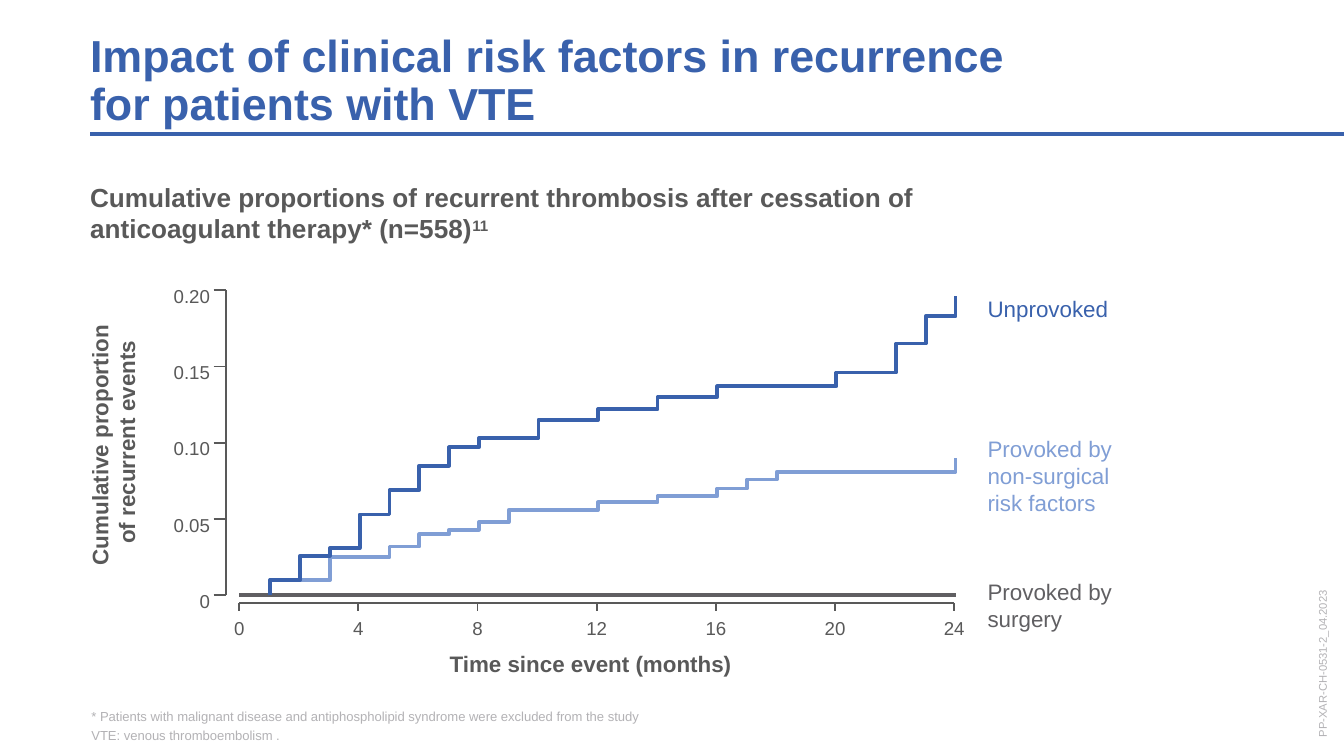
from copy import deepcopy
from dataclasses import dataclass

from lxml.etree import SubElement
from pptx import Presentation
from pptx.dml.color import RGBColor
from pptx.enum.shapes import MSO_CONNECTOR as Connector
from pptx.enum.text import MSO_ANCHOR as Anchor, MSO_AUTO_SIZE as AutoSize, PP_ALIGN as Align
from pptx.oxml.ns import qn
from pptx.util import Inches, Pt


@dataclass(frozen=True)
class Theme:
    font: str = "Arial"
    blue: str = "3961AC"
    light_blue: str = "809ED5"
    gray: str = "595959"
    curve_gray: str = "605F62"
    pale_gray: str = "B3B2B5"
    title: float = 24
    subtitle: float = 14
    label: float = 12
    tick: float = 10
    footnote: float = 7
    code: float = 6
    rule: float = 2.25
    curve: float = 2
    axis: float = 1


# Plot area: inches for the axes, months across and proportion up
PLOT_LEFT, PLOT_RIGHT, PLOT_TOP, PLOT_BOTTOM = 1.78, 7.1, 2.16, 4.43
LAST_MONTH, TOP_PROPORTION = 24, 0.20
Y_AXIS, X_AXIS = 1.68, 4.49
CURVE_SHIFT = 0.01
MONTH_STEP, PROPORTION_TICKS = 4, ["0", "0.05", "0.10", "0.15", "0.20"]

UNPROVOKED = [
    (1, 0.010), (2, 0.026), (3, 0.031), (4, 0.053), (5, 0.069), (6, 0.085),
    (7, 0.097), (8, 0.103), (10, 0.115), (12, 0.122), (14, 0.130),
    (16, 0.137), (20, 0.146), (22, 0.165), (23, 0.183), (24, 0.196),
]
NON_SURGICAL = [
    (1, 0.010), (3, 0.025), (5, 0.032), (6, 0.040), (7, 0.043), (8, 0.048),
    (9, 0.056), (12, 0.061), (14, 0.065), (16, 0.070), (17, 0.076),
    (18, 0.081), (24, 0.090),
]


def month_x(month):
    return PLOT_LEFT + (PLOT_RIGHT - PLOT_LEFT) * month / LAST_MONTH


def proportion_y(value):
    return PLOT_BOTTOM - (PLOT_BOTTOM - PLOT_TOP) * value / TOP_PROPORTION


class SlideBuilder:
    def __init__(self, slide, theme):
        self.slide = slide
        self.theme = theme

    def style_span(self, span, size, color, bold):
        values = {"name": self.theme.font, "size": Pt(size), "bold": bold}
        for name, value in values.items():
            setattr(span.font, name, value)
        span.font.color.rgb = RGBColor.from_string(color)

    def fill_text(self, box, lines, size, color, bold=False, inset=True,
                  anchor=Anchor.TOP, grow=True, **paragraph_format):
        """Write each item of lines as a paragraph; a newline is a line break."""
        frame = box.text_frame
        frame_format = {
            "word_wrap": True, "vertical_anchor": anchor,
            "auto_size": AutoSize.SHAPE_TO_FIT_TEXT if grow else AutoSize.NONE,
        }
        if not inset:
            for side in ("left", "right", "top", "bottom"):
                frame_format[f"margin_{side}"] = 0
        for name, value in frame_format.items():
            setattr(frame, name, value)
        for index, line in enumerate(lines):
            para = frame.add_paragraph() if index else frame.paragraphs[0]
            para.text = line
            for name, value in paragraph_format.items():
                setattr(para, name, value)
            for span in para.runs:
                self.style_span(span, size, color, bold)
            # Line breaks need the run size too, or they stretch the line
            for line_break in para._p.findall(qn("a:br")):
                line_break.append(deepcopy(para.runs[0]._r.rPr))

    def text(self, left, top, width, height, lines, size, color,
             rotation=0, **text_format):
        box = self.slide.shapes.add_textbox(
            Inches(left), Inches(top), Inches(width), Inches(height))
        box.rotation = rotation
        self.fill_text(box, lines, size, color, **text_format)
        return box

    def title(self, left, top, width, height, text):
        box = self.slide.shapes.title
        place = {"left": left, "top": top, "width": width, "height": height}
        for name, value in place.items():
            setattr(box, name, Inches(value))
        self.fill_text(box, [text], self.theme.title, self.theme.blue, bold=True,
                       inset=False, anchor=Anchor.BOTTOM,
                       alignment=Align.LEFT, line_spacing=0.9)

    def superscript(self, box, text, size, color):
        span = box.text_frame.paragraphs[-1].add_run()
        span.text = text
        self.style_span(span, size, color, True)
        span._r.get_or_add_rPr().set("baseline", "30000")

    def line(self, x1, y1, x2, y2, color, weight):
        line = self.slide.shapes.add_connector(
            Connector.STRAIGHT, Inches(x1), Inches(y1), Inches(x2), Inches(y2))
        line.line.color.rgb = RGBColor.from_string(color)
        line.line.width = Pt(weight)
        SubElement(line._element.spPr, qn("a:effectLst"))

    def step_curve(self, steps, color):
        """Draw a curve that jumps to each new proportion at its month."""
        corners, level = [], 0
        for month, value in steps:
            x = Inches(month_x(month) + CURVE_SHIFT)
            corners += [(x, Inches(proportion_y(level))),
                        (x, Inches(proportion_y(value)))]
            level = value
        builder = self.slide.shapes.build_freeform(*corners[0])
        builder.add_line_segments(corners[1:], close=False)
        curve = builder.convert_to_shape()
        curve.shadow.inherit = False
        curve.fill.background()
        curve.line.color.rgb = RGBColor.from_string(color)
        curve.line.width = Pt(self.theme.curve)

    def axes(self):
        theme = self.theme
        stroke = (theme.gray, theme.axis)
        self.line(PLOT_LEFT, X_AXIS, PLOT_RIGHT, X_AXIS, *stroke)
        self.line(Y_AXIS, PLOT_TOP, Y_AXIS, PLOT_BOTTOM, *stroke)
        for label in PROPORTION_TICKS:
            y = proportion_y(float(label))
            self.line(Y_AXIS - 0.09, y, Y_AXIS, y, *stroke)
            self.text(0.81, y - 0.09, 0.85, 0.27, [label], theme.tick, theme.gray,
                      alignment=Align.RIGHT)
        for month in range(0, LAST_MONTH + 1, MONTH_STEP):
            x = month_x(month)
            self.line(x, X_AXIS, x, X_AXIS + 0.06, *stroke)
            self.text(x - 0.37, 4.54, 0.74, 0.27, [str(month)], theme.tick,
                      theme.gray, alignment=Align.CENTER)


def main():
    theme = Theme()
    deck = Presentation()
    deck.slide_width = Inches(10)
    deck.slide_height = deck.slide_width * 9 // 16
    page = SlideBuilder(deck.slides.add_slide(deck.slide_layouts[5]), theme)

    page.title(0.67, 0.24, 9.06, 0.73,
               "Impact of clinical risk factors in recurrence \nfor patients with VTE")
    page.line(0.67, 1, 10, 1, theme.blue, theme.rule)
    subtitle = page.text(
        0.67, 1.35, 9.05, 0.47,
        ["Cumulative proportions of recurrent thrombosis after cessation of \n"
         "anticoagulant therapy* (n=558)"],
        theme.subtitle, theme.gray, bold=True, inset=False)
    page.superscript(subtitle, "11", theme.subtitle, theme.gray)

    page.axes()
    axis_title = {"size": theme.label, "color": theme.gray, "bold": True,
                  "alignment": Align.CENTER}
    page.text(-0.3, 3.04, 2.28, 0.5, ["Cumulative proportion \nof recurrent events"],
              rotation=270, **axis_title)
    page.text(1.68, 4.79, 5.43, 0.3, ["Time since event (months)"], **axis_title)

    page.line(PLOT_LEFT, PLOT_BOTTOM, PLOT_RIGHT + CURVE_SHIFT, PLOT_BOTTOM,
              theme.curve_gray, theme.curve)
    page.step_curve(NON_SURGICAL, theme.light_blue)
    page.step_curve(UNPROVOKED, theme.blue)
    for top, height, label, color in [
        (2.15, 0.3, "Unprovoked", theme.blue),
        (3.19, 0.71, "Provoked by \nnon-surgical \nrisk factors", theme.light_blue),
        (4.25, 0.5, "Provoked by \nsurgery", theme.curve_gray),
    ]:
        page.text(7.25, top, 1.5, height, [label], theme.label, color)

    page.text(0.68, 5.27, 8.65, 0.26,
              ["* Patients with malignant disease and antiphospholipid syndrome "
               "were excluded from the study",
               "VTE: venous thromboembolism ."],
              theme.footnote, theme.pale_gray, inset=False,
              anchor=Anchor.BOTTOM, space_after=Pt(2))
    page.text(9.14, 4.63, 1.4, 0.31, ["PP-XAR-CH-0531-2_04.2023"],
              theme.code, theme.pale_gray, rotation=270, inset=False,
              anchor=Anchor.MIDDLE, grow=False)
    deck.save("out.pptx")


if __name__ == "__main__":
    main()
